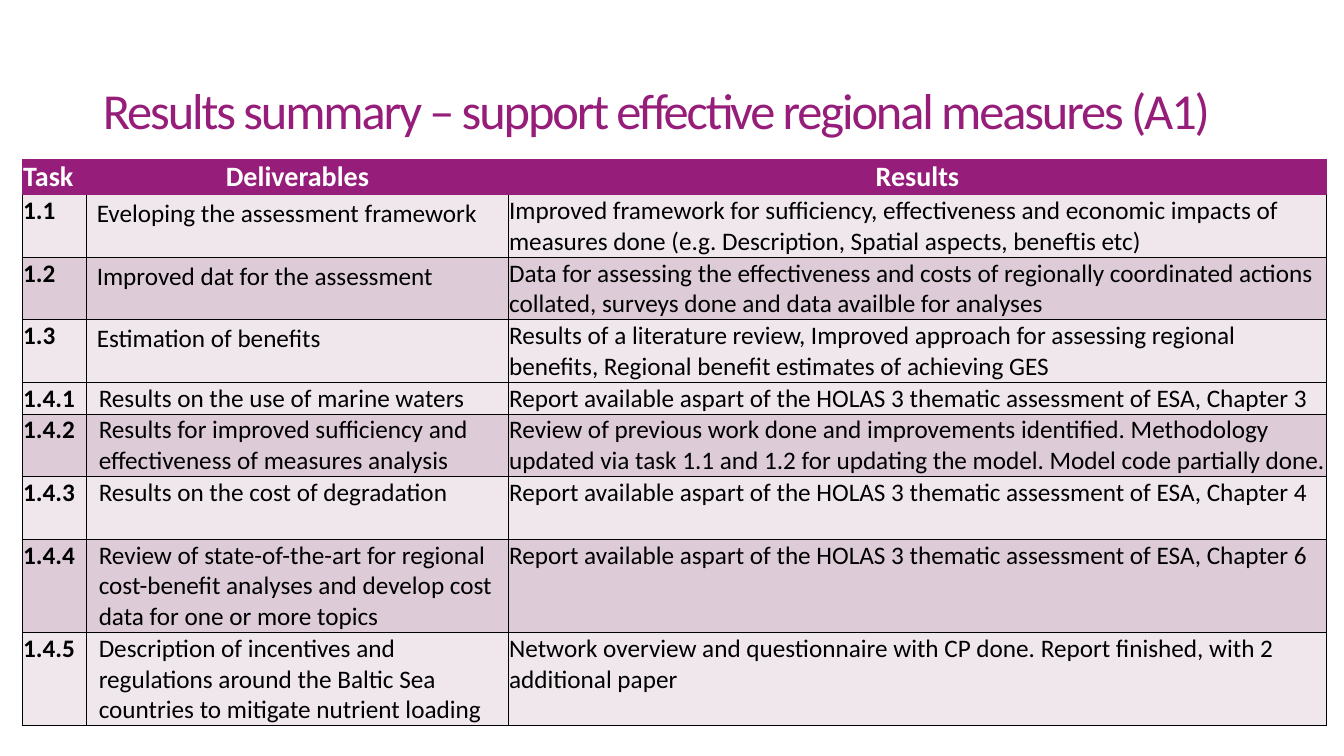
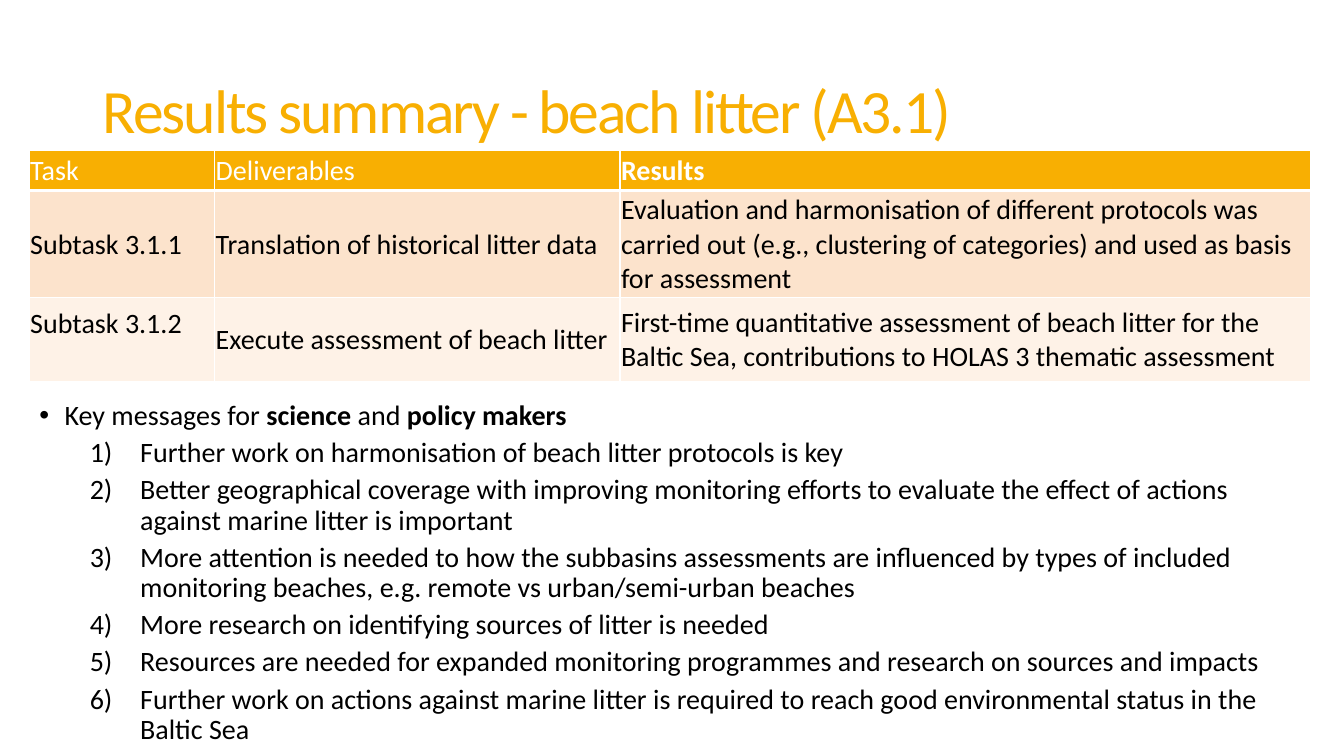
"""Build two slides that sum up project results by task."""
import dataclasses
import typing

import lxml.etree
import pptx
import pptx.dml.color
import pptx.enum.text
import pptx.oxml.ns
import pptx.util

Inches = pptx.util.Inches
Pt = pptx.util.Pt
Align = pptx.enum.text.PP_ALIGN
Anchor = pptx.enum.text.MSO_ANCHOR

FONT = "Calibri"
PLUM, AMBER = "961D79", "F8AF02"
BLACK, WHITE = "000000", "FFFFFF"
PALE, MAUVE = "EFE7EC", "DDCCD7"
PEACH, CREAM = "FCE3CC", "FEF2E7"


@dataclasses.dataclass
class Cell:
    """Text of one table cell and how it sits."""
    text: str
    bold: bool = False
    align: Align = Align.LEFT
    left: float = 0.01
    top: float = 0.01
    anchor: Anchor = Anchor.TOP


@dataclasses.dataclass
class Row:
    """One table row; edges hold widths for left, right, top, bottom."""
    height: float
    fill: str
    edges: tuple[float, float, float, float]
    cells: list[Cell]
    ink: str = BLACK
    size: float = 20


@dataclasses.dataclass
class Grid:
    """A whole table with its place and line colour."""
    left: float
    top: float
    cols: list[float]
    line: str
    rows: list[Row]


def tint(code: str) -> pptx.dml.color.RGBColor:
    """Turn a hex string into a colour."""
    return pptx.dml.color.RGBColor.from_string(code)


def node(base: typing.Any, tag: str, **attrs: str) -> typing.Any:
    """Append an XML child with the given attributes."""
    return lxml.etree.SubElement(base, pptx.oxml.ns.qn(tag), attrs)


def write(para: typing.Any, text: str, size: float, ink: str, bold: bool = False) -> typing.Any:
    """Add one formatted run to a paragraph."""
    run = para.add_run()
    run.text = text
    run.font.name = FONT
    run.font.size = Pt(size)
    run.font.bold = bold
    run.font.color.rgb = tint(ink)
    return run


def place(shape: typing.Any, left: float, top: float, width: float, height: float) -> None:
    """Move and size a shape."""
    shape.left, shape.top = Inches(left), Inches(top)
    shape.width, shape.height = Inches(width), Inches(height)


def head(slide: typing.Any, text: str, size: float, ink: str, width: float) -> None:
    """Fill the title in the shared style."""
    place(slide.shapes.title, 0.92, 0.4, width, 1.45)
    frame = slide.shapes.title.text_frame
    frame.auto_size = pptx.enum.text.MSO_AUTO_SIZE.NONE
    frame.vertical_anchor = Anchor.MIDDLE
    para = frame.paragraphs[0]
    para.alignment = Align.LEFT
    para.line_spacing = 0.9
    run = write(para, text, size, ink)
    run.font._element.set("spc", "-150")


def border(cell: typing.Any, ink: str, widths: tuple[float, ...]) -> None:
    """Draw the four edges of a cell, with zero for none."""
    props = cell._tc.get_or_add_tcPr()
    for spot, (side, width) in enumerate(zip("LRTB", widths)):
        edge = node(props, f"a:ln{side}", w=str(int(Pt(width))))
        if width:
            node(node(edge, "a:solidFill"), "a:srgbClr", val=ink)
        else:
            node(edge, "a:noFill")
        props.insert(spot, edge)


def fill(cell: typing.Any, item: Cell, row: Row, line: str) -> None:
    """Write and format one cell."""
    cell.fill.solid()
    cell.fill.fore_color.rgb = tint(row.fill)
    cell.margin_left, cell.margin_top = Inches(item.left), Inches(item.top)
    cell.margin_right, cell.margin_bottom = Inches(0.01), 0
    cell.vertical_anchor = item.anchor
    para = cell.text_frame.paragraphs[0]
    para.alignment = item.align
    write(para, item.text, row.size, row.ink, item.bold)
    border(cell, line, row.edges)


def chart(slide: typing.Any, grid: Grid) -> None:
    """Add a table to the slide."""
    frame = slide.shapes.add_table(
        len(grid.rows), len(grid.cols), Inches(grid.left), Inches(grid.top),
        Inches(sum(grid.cols)), Inches(sum(row.height for row in grid.rows)))
    table = frame.table
    for col, width in zip(table.columns, grid.cols):
        col.width = Inches(width)
    for spot, row in enumerate(grid.rows):
        table.rows[spot].height = Inches(row.height)
        for cell, item in zip(table.rows[spot].cells, row.cells):
            fill(cell, item, row, grid.line)


def bullet(para: typing.Any, left: float, hang: float, tag: str, **attrs: str) -> None:
    """Give a paragraph its mark and indent."""
    props = para._p.get_or_add_pPr()
    props.set("marL", str(Inches(left)))
    props.set("indent", str(-Inches(hang)))
    node(props, "a:buFont", typeface="Arial" if tag == "a:buChar" else FONT)
    node(props, tag, **attrs)
    para.line_spacing = 0.9


def notes(slide: typing.Any, lead: list[tuple[str, bool]], items: list[str]) -> None:
    """Fill the body with a lead line and a numbered list."""
    body = slide.placeholders[1]
    place(body, 0.29, 3.93, 12.84, 3.55)
    frame = body.text_frame
    frame.auto_size = pptx.enum.text.MSO_AUTO_SIZE.NONE
    para = frame.paragraphs[0]
    bullet(para, 0.25, 0.25, "a:buChar", char="•")
    para.space_before = Pt(0)
    for text, bold in lead:
        write(para, text, 20, BLACK, bold)
    for text in items:
        para = frame.add_paragraph()
        para.level = 1
        bullet(para, 1, 0.5, "a:buAutoNum", type="arabicParenR")
        para.space_before = Pt(5)
        write(para, text, 20, BLACK)


TASKS = [
    ("1.1", "Eveloping the assessment framework",
     "Improved framework for sufficiency, effectiveness and economic impacts of measures done "
     "(e.g. Description, Spatial aspects, beneftis etc)", 0.62, PALE),
    ("1.2", "Improved dat for the assessment",
     "Data for assessing the effectiveness and costs of regionally coordinated actions collated, "
     "surveys done and data availble for analyses", 0.62, MAUVE),
    ("1.3", "Estimation of benefits",
     "Results of a literature review, Improved approach for assessing regional benefits, "
     "Regional benefit estimates of achieving GES", 0.62, PALE),
    ("1.4.1", "Results on the use of marine waters",
     "Report available aspart of the HOLAS 3 thematic assessment of ESA, Chapter 3", 0.31, PALE),
    ("1.4.2", "Results for improved sufficiency and effectiveness of measures analysis",
     "Review of previous work done and improvements identified. Methodology updated via task 1.1 "
     "and 1.2 for updating the model. Model code partially done.", 0.62, MAUVE),
    ("1.4.3", "Results on the cost of degradation",
     "Report available aspart of the HOLAS 3 thematic assessment of ESA, Chapter 4", 0.62, PALE),
    ("1.4.4", "Review of state-of-the-art for regional cost-benefit analyses and develop cost data "
     "for one or more topics",
     "Report available aspart of the HOLAS 3 thematic assessment of ESA, Chapter 6", 0.92, MAUVE),
    ("1.4.5", "Description of incentives and regulations around the Baltic Sea countries to "
     "mitigate nutrient loading",
     "Network overview and questionnaire with CP done. Report finished, with 2 additional paper",
     0.92, PALE),
]

POINTS = [
    "Further work on harmonisation of beach litter protocols is key",
    "Better geographical coverage with improving monitoring efforts to evaluate the effect of "
    "actions against marine litter is important",
    "More attention is needed to how the subbasins assessments are influenced by types of included "
    "monitoring beaches, e.g. remote vs urban/semi-urban beaches",
    "More research on identifying sources of litter is needed",
    "Resources are needed for expanded monitoring programmes and research on sources and impacts",
    "Further work on actions against marine litter is required to reach good environmental status "
    "in the Baltic Sea",
]


def region(deck: typing.Any) -> None:
    """Add the slide on regional measures."""
    slide = deck.slides.add_slide(deck.slide_layouts[5])
    head(slide, "Results summary – support effective regional measures (A1)", 36, PLUM, 11.51)
    rows = [Row(0.34, PLUM, (0, 0, 0, 0), [
        Cell("Task", True),
        Cell("Deliverables", True, Align.CENTER),
        Cell("Results", True, Align.CENTER)], WHITE)]
    for spot, (task, goal, result, height, shade) in enumerate(TASKS):
        left, top = (0.1, 0.04) if spot < 3 else (0.12, 0.01)
        edges = (0.5, 0.5, 0.5 if spot else 0, 0.5)
        cells = [Cell(task, True), Cell(goal, left=left, top=top), Cell(result)]
        rows.append(Row(height, shade, edges, cells, size=18))
    chart(slide, Grid(0.22, 1.58, [0.64, 4.18, 8.12], BLACK, rows))


def litter(deck: typing.Any) -> None:
    """Add the slide on beach litter."""
    slide = deck.slides.add_slide(deck.slide_layouts[1])
    head(slide, "Results summary - beach litter (A3.1)", 44, AMBER, 10.5)
    mid = Anchor.MIDDLE
    thin = (1, 1, 1, 1)
    rows = [
        Row(0.4, AMBER, (1, 1, 1, 3), [
            Cell("Task", anchor=mid),
            Cell("Deliverables", anchor=mid),
            Cell("Results", True, anchor=mid)], WHITE),
        Row(1.06, PEACH, thin, [
            Cell("Subtask 3.1.1", anchor=mid),
            Cell("Translation of historical litter data", anchor=mid),
            Cell("Evaluation and harmonisation of different protocols was carried out (e.g., "
                 "clustering of categories) and used as basis for assessment", anchor=mid)]),
        Row(0.84, CREAM, thin, [
            Cell("Subtask 3.1.2", top=0.09),
            Cell("Execute assessment of beach litter", anchor=mid),
            Cell("First-time quantitative assessment of beach litter for the Baltic Sea, "
                 "contributions to HOLAS 3 thematic assessment", anchor=mid)]),
    ]
    chart(slide, Grid(0.29, 1.49, [1.84, 4.02, 6.85], WHITE, rows))
    lead = [("Key messages for ", False), ("science ", True), ("and", False),
            (" policy makers", True)]
    notes(slide, lead, POINTS)


def main() -> None:
    """Build and save the deck."""
    deck = pptx.Presentation()
    deck.slide_width, deck.slide_height = Inches(13.33), Inches(7.5)
    region(deck)
    litter(deck)
    deck.save("out.pptx")


if __name__ == "__main__":
    main()
